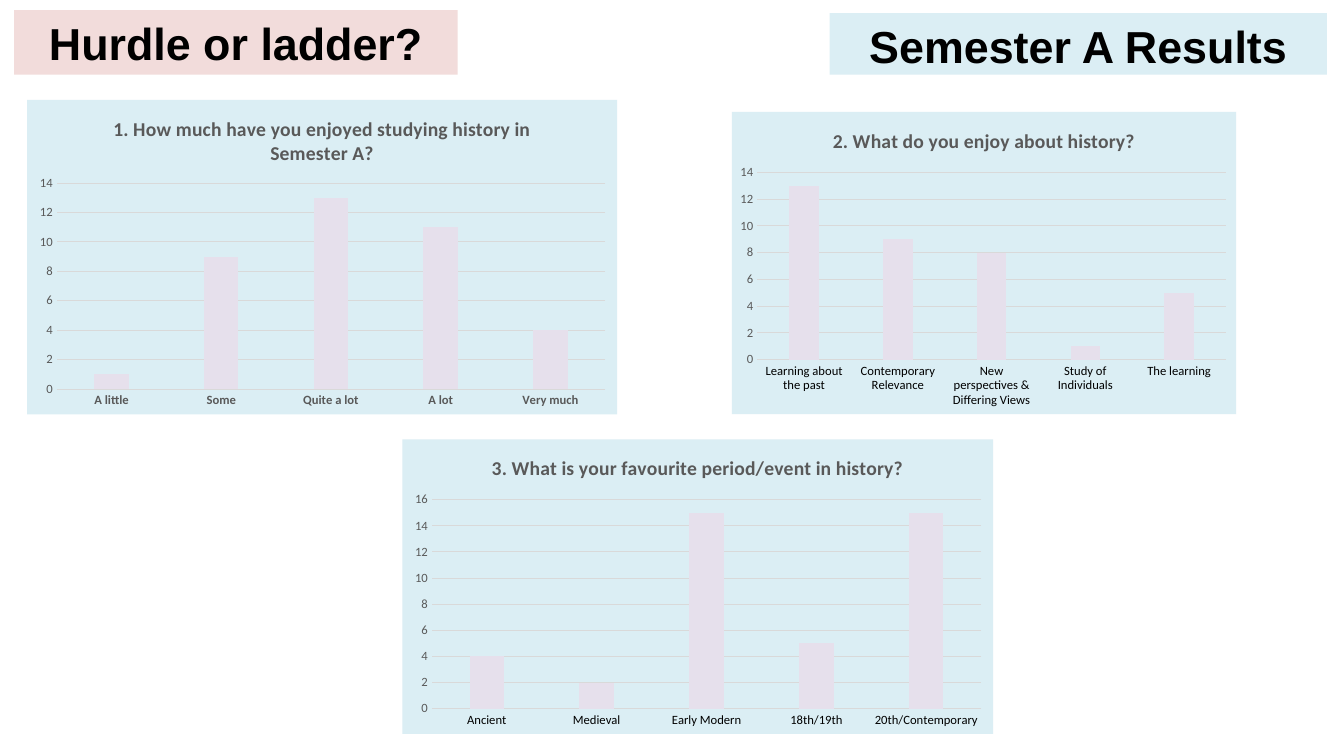
from dataclasses import dataclass

from lxml.etree import SubElement
from pptx import Presentation
from pptx.chart.axis import _BaseAxis as Axis
from pptx.chart.chart import Chart
from pptx.chart.data import CategoryChartData as Data
from pptx.dml.color import RGBColor
from pptx.enum.chart import XL_CHART_TYPE as Kind, XL_TICK_MARK as Tick
from pptx.enum.text import MSO_ANCHOR as Anchor, MSO_AUTO_SIZE as Fit, PP_ALIGN as Align
from pptx.oxml import parse_xml
from pptx.oxml.ns import nsdecls, qn
from pptx.util import Inches, Pt

BLACK = RGBColor(0x00, 0x00, 0x00)
GREY = RGBColor(0x59, 0x59, 0x59)
RULE = RGBColor(0xD9, 0xD9, 0xD9)
BLUE = RGBColor(0xDB, 0xEE, 0xF4)
PINK = RGBColor(0xF2, 0xDC, 0xDB)
LILAC = RGBColor(0xE6, 0xE0, 0xEC)

Box = tuple[float, float, float, float]


@dataclass
class Banner:
    text: str
    box: Box
    fill: RGBColor


@dataclass
class Survey:
    title: str
    box: Box
    votes: dict[str, int]
    top: float  # plot top and height, as shares of the chart
    high: float
    ink: RGBColor = BLACK
    bold: bool = False


BANNERS = [
    Banner("Hurdle or ladder?", (0.14, 0.1, 4.4, 0.64), PINK),
    Banner("Semester A Results", (8.23, 0.13, 4.93, 0.61), BLUE),
]
SURVEYS = [
    Survey("1. How much have you enjoyed studying history in Semester A?",
           (0.27, 0.99, 5.85, 3.12),
           {"A little": 1, "Some": 9, "Quite a lot": 13, "A lot": 11, "Very much": 4},
           0.265, 0.655, GREY, True),
    Survey("2. What do you enjoy about history?",
           (7.26, 1.11, 5, 3),
           {"Learning about the past": 13, "Contemporary Relevance": 9,
            "New perspectives & Differing Views": 8, "Study of Individuals": 1,
            "The learning": 5},
           0.2, 0.62),
    Survey("3. What is your favourite period/event in history?",
           (3.99, 4.36, 5.86, 2.92),
           {"Ancient": 4, "Medieval": 2, "Early Modern": 15, "18th/19th": 5,
            "20th/Contemporary": 15},
           0.205, 0.71),
]


def style(item, **values) -> None:
    for name, value in values.items():
        setattr(item, name, value)


def ink(font, size: float, color: RGBColor, bold: bool, face: str = "Calibri") -> None:
    style(font, size=Pt(size), bold=bold, name=face)
    font.color.rgb = color


def rule(line) -> None:
    line.color.rgb = RULE
    line.width = Pt(0.75)


def fill_banner(shape, item: Banner) -> None:
    left, top, width, height = map(Inches, item.box)
    style(shape, left=left, top=top, width=width, height=height)
    shape.fill.solid()
    shape.fill.fore_color.rgb = item.fill
    frame = shape.text_frame
    style(frame, text=item.text, word_wrap=True, auto_size=Fit.NONE,
          vertical_anchor=Anchor.TOP,
          margin_left=Inches(0.11), margin_right=Inches(0.11),
          margin_top=Inches(0.06), margin_bottom=Inches(0.06))
    para = frame.paragraphs[0]
    style(para, alignment=Align.CENTER, space_before=Pt(0.9), space_after=Pt(0.9))
    ink(para.runs[0].font, 32, BLACK, True, "Arial")


def set_back(chart: Chart, color: RGBColor) -> None:
    """Fill the whole chart area and leave it without a border."""
    chart.element.find(qn("c:chart")).addnext(parse_xml(
        f'<c:spPr {nsdecls("c", "a")}><a:solidFill><a:srgbClr val="{color}"/>'
        '</a:solidFill><a:ln><a:noFill/></a:ln></c:spPr>'))


def set_plot(chart: Chart, top: float, high: float) -> None:
    """Fix the inner plot area by shares of the chart size."""
    area = chart.element.find(qn("c:chart")).find(qn("c:plotArea"))
    for old in area.findall(qn("c:layout")):
        area.remove(old)
    layout = parse_xml(f'<c:layout {nsdecls("c")}><c:manualLayout/></c:layout>')
    parts = {"layoutTarget": "inner", "xMode": "edge", "yMode": "edge",
             "x": 0.05, "y": top, "w": 0.93, "h": high}
    for name, value in parts.items():
        SubElement(layout[0], qn(f"c:{name}")).set("val", str(value))
    area.insert(0, layout)


def set_axis(axis: Axis, color: RGBColor, bold: bool) -> None:
    style(axis, major_tick_mark=Tick.NONE, minor_tick_mark=Tick.NONE)
    ink(axis.tick_labels.font, 9, color, bold)


def add_survey(slide, item: Survey) -> None:
    data = Data()
    data.categories = list(item.votes)
    data.add_series("Series 1", list(item.votes.values()))
    chart = slide.shapes.add_chart(
        Kind.COLUMN_CLUSTERED, *map(Inches, item.box), data).chart
    ink(chart.font, 10, BLACK, False)
    style(chart, has_legend=False, has_title=True)
    set_back(chart, BLUE)
    set_plot(chart, item.top, item.high)

    frame = chart.chart_title.text_frame
    frame.text = item.title
    ink(frame.paragraphs[0].runs[0].font, 14, GREY, True)
    chart.chart_title.include_in_layout = False

    names, scale = chart.category_axis, chart.value_axis
    set_axis(names, item.ink, item.bold)
    set_axis(scale, GREY, False)
    rule(names.format.line)
    scale.format.line.fill.background()
    style(scale, has_major_gridlines=True, minimum_scale=0, major_unit=2)
    rule(scale.major_gridlines.format.line)

    plot = chart.plots[0]
    style(plot, gap_width=219, overlap=-27, vary_by_categories=False)
    bars = plot.series[0].format.fill
    bars.solid()
    bars.fore_color.rgb = LILAC


def main() -> None:
    deck = Presentation()
    style(deck, slide_width=Inches(13.33), slide_height=Inches(7.5))
    slide = deck.slides.add_slide(deck.slide_layouts.get_by_name("Title Only"))
    for item in SURVEYS:
        add_survey(slide, item)
    label = slide.shapes.add_textbox(0, 0, 0, 0)
    for shape, item in zip((slide.shapes.title, label), BANNERS):
        fill_banner(shape, item)
    deck.save("out.pptx")


if __name__ == "__main__":
    main()
